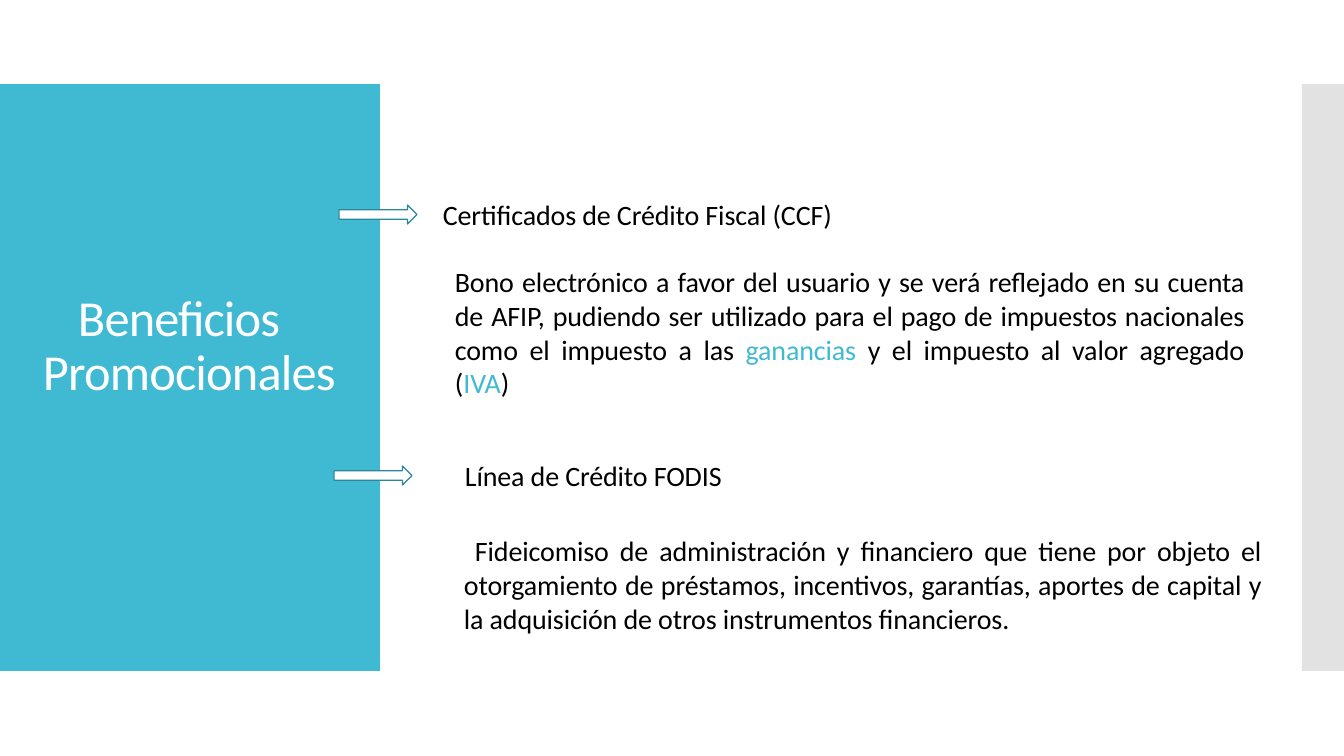
from lxml import etree
from pptx import Presentation
from pptx.dml.color import RGBColor
from pptx.enum.shapes import MSO_SHAPE
from pptx.enum.text import MSO_ANCHOR, MSO_AUTO_SIZE, PP_ALIGN
from pptx.oxml.ns import qn
from pptx.util import Pt

RECT, ARROW = MSO_SHAPE.RECTANGLE, MSO_SHAPE.RIGHT_ARROW
LEFT, JUSTIFY = PP_ALIGN.LEFT, PP_ALIGN.JUSTIFY
TOP, NO_FIT = MSO_ANCHOR.TOP, MSO_AUTO_SIZE.NONE
FONT = "Calibri"
TITLE_LAYOUT = 5
COLORS = {"accent": "40B9D2", "strip": "C7C7C7", "arrow_line": "2C879A",
          "text": "000000", "white": "FFFFFF"}


def px(n):
    return round(n * 914400 / 100.8)


def color(name):
    return RGBColor.from_string(COLORS[name])


def add_filled(s, kind, box, fill):
    sp = s.shapes.add_shape(kind, *map(px, box))
    sp.shadow.inherit = False
    sp.fill.solid()
    sp.fill.fore_color.rgb = color(fill)
    sp.line.fill.background()
    return sp


def add_run(p, text, size, fill, spacing):
    r = p.add_run()
    r.text = text
    r.font.name = FONT
    r.font.size = Pt(size)
    r.font.color.rgb = color(fill)
    r.font._element.set("spc", str(spacing))  # hundredths of a point


def add_text(s, box, runs, align=LEFT, wrap=True):
    tf = s.shapes.add_textbox(*map(px, box)).text_frame
    tf.word_wrap = wrap
    p = tf.paragraphs[0]
    p.alignment = align
    for text, fill in runs:
        add_run(p, text, 20, fill, -10)


# Accent panel on the left, half-transparent strip on the right
def add_bands(s, box):
    x, y, w, h = box
    add_filled(s, RECT, (x, y, 380, h), "accent")
    strip = add_filled(s, RECT, (x + w - 42, y, 42, h), "strip")
    clr = strip._element.spPr.find(qn("a:solidFill")).find(qn("a:srgbClr"))
    etree.SubElement(clr, qn("a:alpha")).set("val", "50000")


# Title with an indented first line
def add_title(s, box):
    sp = s.shapes.title
    sp.left, sp.top, sp.width, sp.height = map(px, box)
    tf = sp.text_frame
    tf.word_wrap = True
    tf.auto_size = NO_FIT
    tf.vertical_anchor = TOP
    tf.margin_left = tf.margin_right = tf.margin_bottom = 0
    tf.margin_top = px(8)
    p = tf.paragraphs[0]
    p.alignment = LEFT
    p.line_spacing = Pt(38.9)
    p.space_before = Pt(5.8)
    pPr = p._p.get_or_add_pPr()
    pPr.set("marL", str(px(1)))
    pPr.set("indent", str(px(35)))
    add_run(p, "Beneficios Promocionales", 36, "white", -60)


# One benefit: arrow, heading and description
def add_benefit(s, box, heading_box, body_box, heading, body):
    x, y, w, h = box
    arrow = add_filled(s, ARROW, (x, y, w, h), "white")
    arrow.adjustments[0], arrow.adjustments[1] = 0.5, 0.5
    arrow.line.color.rgb = color("arrow_line")
    arrow.line.width = Pt(0.84)
    for (dx, dy, tw, th), runs, align, wrap in (
            (heading_box, [(heading, "text")], LEFT, False),
            (body_box, body, JUSTIFY, True)):
        add_text(s, (x + dx, y + dy, tw, th), runs, align, wrap)


def main():
    prs = Presentation()
    prs.slide_width, prs.slide_height = px(1344), px(756)
    s = prs.slides.add_slide(prs.slide_layouts[TITLE_LAYOUT])
    for ph in list(s.placeholders):
        if ph.placeholder_format.idx != 0:
            ph._element.getparent().remove(ph._element)

    add_bands(s, (0, 84, 1344, 587))
    # Title goes above the panel in the drawing order
    s.shapes._spTree.append(s.shapes.title._element)
    add_title(s, (42, 284, 336, 119))

    add_benefit(s, (339, 205, 78, 19), (94, -12, 416, 44), (106, 55, 809, 146),
                "Certificados de Crédito Fiscal (CCF)",
                [("Bono electrónico a favor del usuario y se verá reflejado en su "
                  "cuenta de AFIP, pudiendo ser utilizado para el pago de impuestos "
                  "nacionales como el impuesto a las ", "text"),
                 ("ganancias", "accent"),
                 (" y el impuesto al valor agregado (", "text"),
                 ("IVA", "accent"),
                 (")", "text")])
    add_benefit(s, (334, 466, 78, 19), (121, -12, 281, 44), (120, 63, 817, 112),
                "Línea de Crédito FODIS",
                [(" Fideicomiso de administración y financiero que tiene por objeto "
                  "el otorgamiento de préstamos, incentivos, garantías, aportes de "
                  "capital y la adquisición de otros instrumentos financieros.",
                  "text")])
    prs.save("out.pptx")


if __name__ == "__main__":
    main()
